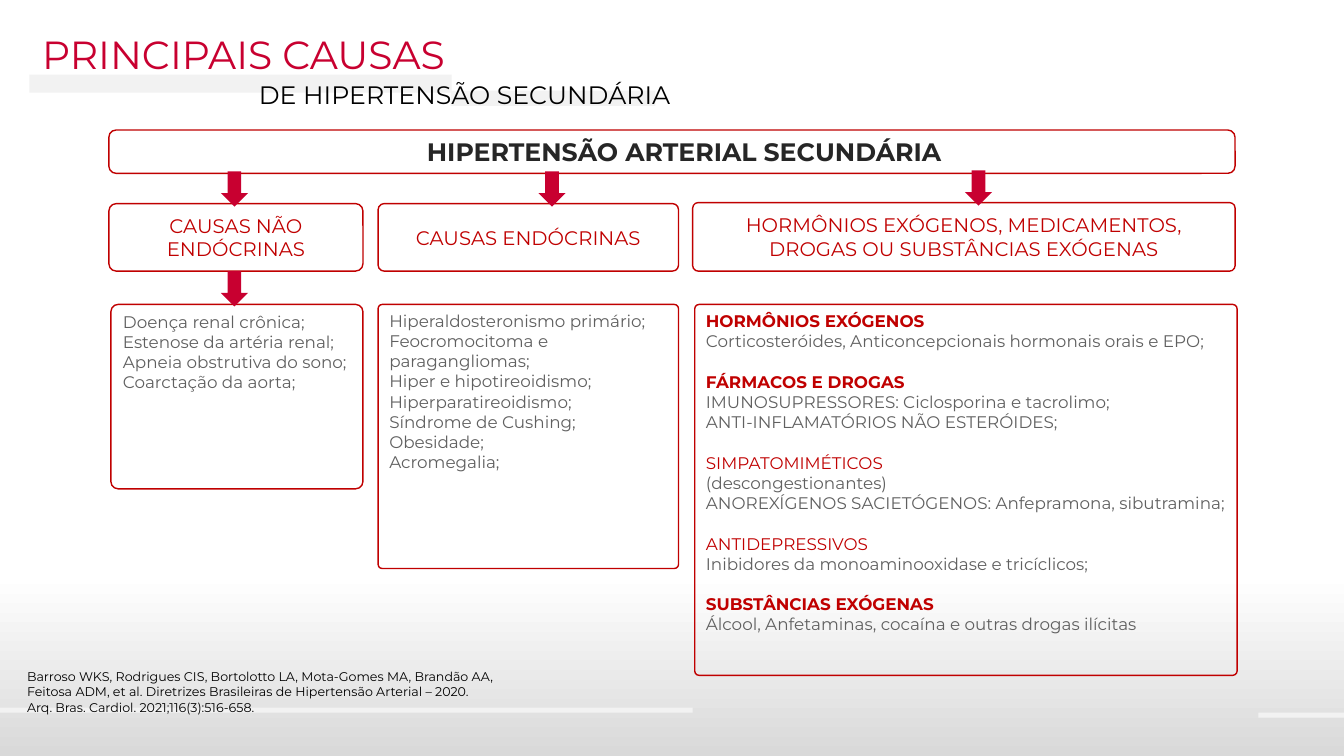
from pptx import Presentation
from pptx.dml.color import RGBColor
from pptx.enum.shapes import MSO_SHAPE
from pptx.enum.text import MSO_ANCHOR, PP_ALIGN
from pptx.util import Inches, Pt

CRIMSON = RGBColor(0xC8, 0x00, 0x30)
RED = RGBColor(0xC0, 0x00, 0x00)
GRAY = RGBColor(0x60, 0x60, 0x60)
DARK = RGBColor(0x26, 0x26, 0x26)
BLACK = RGBColor(0, 0, 0)
WHITE = RGBColor(0xFF, 0xFF, 0xFF)
LIGHT = RGBColor(0xF2, 0xF2, 0xF2)
SHADE = RGBColor(0xD9, 0xD9, 0xD9)
FONT = "Montserrat"
LINE_GAP = Pt(14.6)

BARS = [
    (0.29, 0.74, 4.19, 0.18),
    (4.47, 0.9, 2.03, 0.15),
    (0, 7.02, 6.87, 0.05),
    (12.48, 7.07, 0.85, 0.05),
]
CAUSE_HEADINGS = [
    ((1.08, 2.02, 2.52, 0.67), 0.11, "CAUSAS NÃO ENDÓCRINAS"),
    ((3.75, 2.02, 2.98, 0.67), 0.09, "CAUSAS ENDÓCRINAS"),
    ((6.87, 2.01, 5.38, 0.68), 0.08,
     "HORMÔNIOS EXÓGENOS, MEDICAMENTOS, DROGAS OU SUBSTÂNCIAS EXÓGENAS"),
]
NON_ENDOCRINE = [
    "Doença renal crônica;",
    "Estenose da artéria renal;",
    "Apneia obstrutiva do sono;",
    "Coarctação da aorta;",
]
ENDOCRINE = [
    "Hiperaldosteronismo primário;",
    "Feocromocitoma e paragangliomas;",
    "Hiper e hipotireoidismo;",
    "Hiperparatireoidismo;",
    "Síndrome de Cushing;",
    "Obesidade;",
    "Acromegalia;",
]
# Heading, bold heading, lines below it
EXOGENOUS = [
    ("HORMÔNIOS EXÓGENOS", True,
     ["Corticosteróides, Anticoncepcionais hormonais orais e EPO;"]),
    ("FÁRMACOS E DROGAS", True,
     ["IMUNOSUPRESSORES: Ciclosporina e tacrolimo;",
      "ANTI-INFLAMATÓRIOS NÃO ESTERÓIDES;"]),
    ("SIMPATOMIMÉTICOS", False,
     ["(descongestionantes)",
      "ANOREXÍGENOS SACIETÓGENOS: Anfepramona, sibutramina;"]),
    ("ANTIDEPRESSIVOS", False,
     ["Inibidores da monoaminooxidase e tricíclicos;"]),
    ("SUBSTÂNCIAS EXÓGENAS", True,
     ["Álcool, Anfetaminas, cocaína e outras drogas ilícitas"]),
]
REFERENCE = [
    "Barroso WKS, Rodrigues CIS, Bortolotto LA, Mota-Gomes MA, Brandão AA,",
    "Feitosa ADM, et al. Diretrizes Brasileiras de Hipertensão Arterial – 2020.",
    "Arq. Bras. Cardiol. 2021;116(3):516-658.",
]
ARROWS = [(2.19, 1.7), (5.34, 1.7), (9.57, 1.69), (2.19, 2.69)]


def add_plain_shape(s, kind, box, color=None):
    sp = s.shapes.add_shape(kind, *map(Inches, box))
    sp.shadow.inherit = False
    sp.line.fill.background()
    if color is None:
        sp.fill.background()
    else:
        sp.fill.solid()
        sp.fill.fore_color.rgb = color
    return sp


def add_backdrop(s):
    sp = add_plain_shape(s, MSO_SHAPE.RECTANGLE, (0, 0, 13.33, 7.5))
    sp.fill.gradient()
    sp.fill.gradient_angle = 270
    for stop, position, color in zip(sp.fill.gradient_stops, (0.76, 1), (WHITE, SHADE)):
        stop.position = position
        stop.color.rgb = color


def add_line(tf, text, size, color, bold=False, align=PP_ALIGN.LEFT):
    """Fill the first paragraph if it is still empty, else append one."""
    p = tf.paragraphs[0] if not tf.text else tf.add_paragraph()
    p.text = text
    p.alignment = align
    font = p.runs[0].font
    font.name, font.size, font.bold = FONT, Pt(size), bold
    font.color.rgb = color
    return p


def add_text(s, box, lines, size, color):
    tf = s.shapes.add_textbox(*map(Inches, box)).text_frame
    tf.word_wrap = True
    for line in lines:
        add_line(tf, line, size, color)


def add_panel(s, box, corner, fill=WHITE, anchor=MSO_ANCHOR.TOP):
    """Add a red rounded outline and return its text frame."""
    sp = add_plain_shape(s, MSO_SHAPE.ROUNDED_RECTANGLE, box, fill)
    sp.adjustments[0] = corner
    sp.line.color.rgb = RED
    sp.line.width = Pt(1)
    tf = sp.text_frame
    tf.word_wrap = True
    tf.vertical_anchor = anchor
    return tf


def add_list_panel(s, box, corner, items):
    tf = add_panel(s, box, corner)
    for item in items:
        add_line(tf, item, 12, GRAY)


def add_exogenous_panel(s):
    tf = add_panel(s, (6.89, 3.02, 5.38, 3.68), 0.012, fill=None)
    tf.margin_right = Inches(0.05)
    for i, (heading, bold, lines) in enumerate(EXOGENOUS):
        p = add_line(tf, heading, 12, RED, bold)
        if i:
            p.space_before = LINE_GAP
        for line in lines:
            add_line(tf, line, 12, GRAY)


def main():
    prs = Presentation()
    prs.slide_width, prs.slide_height = Inches(13.33), Inches(7.5)
    s = prs.slides.add_slide(prs.slide_layouts[6])

    add_backdrop(s)
    for bar in BARS:
        add_plain_shape(s, MSO_SHAPE.RECTANGLE, bar, LIGHT)
    add_text(s, (0.32, 0.25, 11.46, 0.57), ["PRINCIPAIS CAUSAS"], 28, CRIMSON)

    tf = add_panel(s, (1.08, 1.29, 11.17, 0.43), 0.167, anchor=MSO_ANCHOR.MIDDLE)
    tf.margin_left = Inches(0.34)
    add_line(tf, "HIPERTENSÃO ARTERIAL SECUNDÁRIA", 18, DARK, True, PP_ALIGN.CENTER)
    for box, corner, text in CAUSE_HEADINGS:
        tf = add_panel(s, box, corner, anchor=MSO_ANCHOR.MIDDLE)
        add_line(tf, text, 14, RED, align=PP_ALIGN.CENTER)

    add_list_panel(s, (1.1, 3.02, 2.5, 1.83), 0.04, NON_ENDOCRINE)
    add_list_panel(s, (3.75, 3.02, 2.98, 2.62), 0.016, ENDOCRINE)
    add_exogenous_panel(s)
    for left, top in ARROWS:
        add_plain_shape(s, MSO_SHAPE.DOWN_ARROW, (left, top, 0.27, 0.35), CRIMSON)

    add_text(s, (0.17, 6.59, 6.24, 0.56), REFERENCE, 9, BLACK)
    add_text(s, (2.47, 0.74, 10.46, 0.4), ["DE HIPERTENSÃO SECUNDÁRIA"], 18, BLACK)
    prs.save("out.pptx")


if __name__ == "__main__":
    main()
